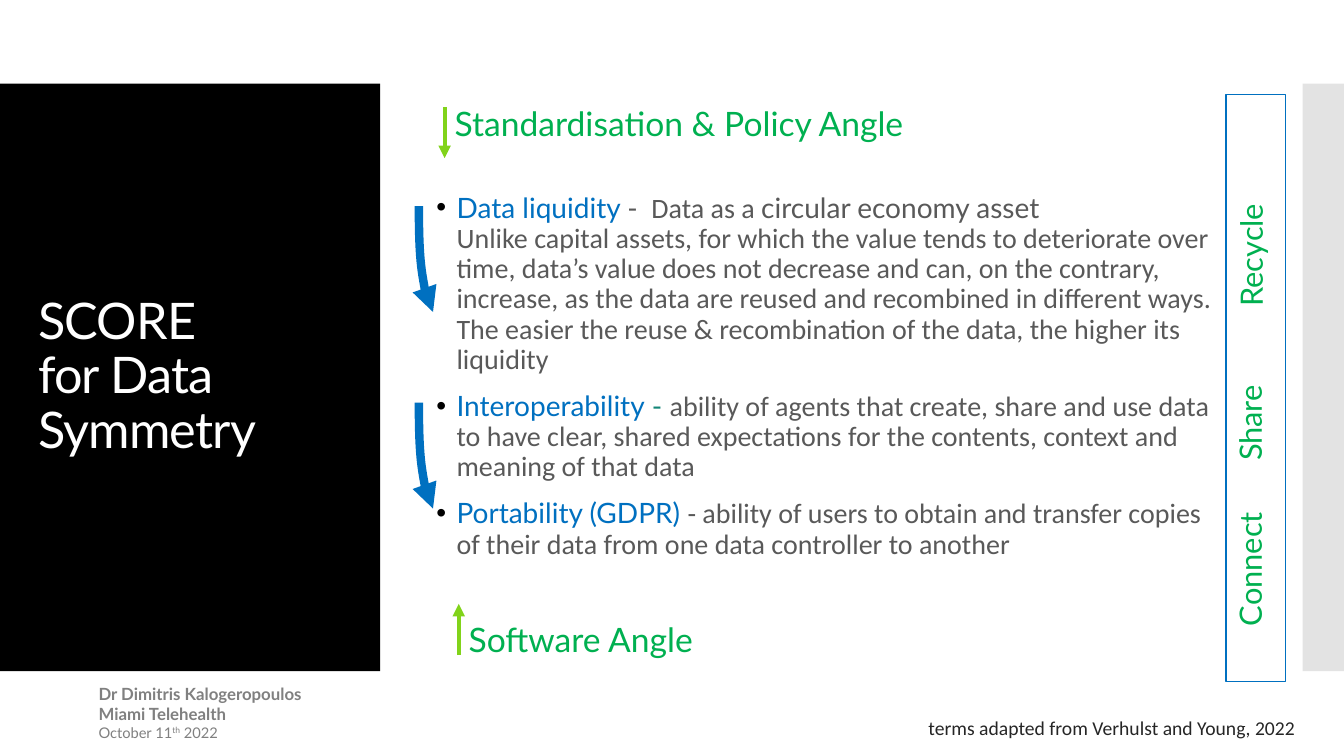
from lxml.etree import SubElement
from pptx import Presentation
from pptx.dml.color import RGBColor
from pptx.enum.shapes import MSO_CONNECTOR as CONN, MSO_SHAPE
from pptx.enum.text import MSO_ANCHOR as ANCHOR, MSO_AUTO_SIZE as AUTO
from pptx.oxml.ns import qn
from pptx.util import Pt

PX = 9144  # EMU per px, 100 px to the inch
BLUE, GREEN, LIME, GREY = "0070C0", "00B050", "81D31A", "595959"
BODY = {"size": Pt(20)}


def rgb(value):
    return RGBColor.from_string(value)


def add_text(box, paragraphs, anchor=ANCHOR.TOP, wrap=True, grow=True):
    """Add a text box; a paragraph is a list of (text, font, colour, format) runs or "\\n"."""
    tf = s.shapes.add_textbox(*(v * PX for v in box)).text_frame
    tf.word_wrap, tf.vertical_anchor = wrap, anchor
    tf.auto_size = AUTO.SHAPE_TO_FIT_TEXT if grow else AUTO.NONE
    for i, runs in enumerate(paragraphs):
        p = tf.add_paragraph() if i else tf.paragraphs[0]
        for run in runs:
            if run == "\n":
                p.add_line_break()
                continue
            text, font, colour, fmt = run
            r = p.add_run()
            r.text, r.font.name = text, font
            r.font.color.rgb = rgb(colour)
            for key, value in fmt.items():
                setattr(r.font, key, value)
    return tf


prs = Presentation()
prs.slide_width, prs.slide_height = 1333 * PX, 750 * PX
s = prs.slides.add_slide(prs.slide_layouts[6])

# Panels
for box, fill, line, alpha in [
    ((0, 83, 377, 583), "000000", None, None),
    ((1292, 83, 41, 583), "C8C8C8", None, 50),
    ((1216, 94, 59, 582), "FFFFFF", BLUE, None),
]:
    sp = s.shapes.add_shape(MSO_SHAPE.RECTANGLE, *(v * PX for v in box))
    sp.shadow.inherit = False
    sp.fill.solid()
    sp.fill.fore_color.rgb = rgb(fill)
    if alpha:
        clr = sp._element.spPr.find(qn("a:solidFill"))[0]
        SubElement(clr, qn("a:alpha"), val=str(alpha * 1000))
    if line:
        sp.line.color.rgb = rgb(line)
        sp.line.width = Pt(0.85)
    else:
        sp.line.fill.background()

# Title
title_format = {"size": Pt(36)}
tf = add_text((28, 123, 322, 503), [[
    ("SCORE", "Lato", "FFFFFF", title_format), "\n",
    ("for Data Symmetry", "Lato", "FFFFFF", title_format),
]], ANCHOR.MIDDLE, grow=False)
tf.paragraphs[0].line_spacing = 0.9
for r in tf.paragraphs[0].runs:
    r._r.get_or_add_rPr().set("spc", "-60")

# Definitions
tf = add_text((423, 94, 792, 560), [
    [
        ("Data liquidity ", "Lato", BLUE, BODY),
        ("- ", "Lato", GREY, BODY),
        (" Data as a ", "Calibri", GREY, BODY),
        ("circular economy asset", "Lato", GREY, BODY), "\n",
        ("Unlike capital assets, for which the value tends to deteriorate over time, "
         "data’s value does not decrease and can, on the contrary, increase, as the data "
         "are reused and recombined in different ways. The easier the reuse & "
         "recombination of the data, the higher its liquidity", "Calibri", GREY, BODY),
    ],
    [
        ("Interoperability", "Lato", BLUE, BODY),
        (" - ", "Lato", "138677", BODY),
        ("ability of agents that create, share and use data to have clear, shared "
         "expectations for the contents, context and meaning of that data",
         "Calibri", GREY, BODY),
    ],
    [
        ("Portability (GDPR) ", "Lato", BLUE, BODY),
        ("- ability of users to obtain and transfer copies of their data from one data "
         "controller to another", "Calibri", GREY, BODY),
    ],
], ANCHOR.MIDDLE, grow=False)
for p in tf.paragraphs:
    p.line_spacing, p.space_before = 0.9, Pt(12)
    pPr = p._p.get_or_add_pPr()
    pPr.set("marL", str(20 * PX))
    pPr.set("indent", str(-20 * PX))
    SubElement(SubElement(pPr, qn("a:buClr")), qn("a:srgbClr"), val="000000")
    SubElement(pPr, qn("a:buFont"), typeface="Arial")
    SubElement(pPr, qn("a:buChar"), char="•")

# Arrows: the curved ones lie flat and are turned upright
for kind, ends, colour, width in [
    (CONN.CURVE, (475, 250, 370, 264), BLUE, 6),
    (CONN.CURVE, (475, 445, 370, 459), BLUE, 6),
    (CONN.STRAIGHT, (455, 650, 455, 599), LIME, 3),
    (CONN.STRAIGHT, (441, 106, 441, 157), LIME, 3),
]:
    arrow = s.shapes.add_connector(kind, *(v * PX for v in ends))
    arrow.line.color.rgb = rgb(colour)
    arrow.line.width = Pt(width)
    spPr = arrow._element.spPr
    SubElement(spPr.find(qn("a:ln")), qn("a:tailEnd"), type="triangle")
    SubElement(spPr, qn("a:effectLst"))
    if kind == CONN.CURVE:
        spPr.find(qn("a:prstGeom")).set("prst", "curvedConnector2")
        spPr.find(qn("a:xfrm")).set("rot", str(270 * 60000))

# One-line labels
for text, box, font, size, colour, upright in [
    ("terms adapted from Verhulst and Young, 2022", (911, 705, 388, 34),
     "Calibri", 14, "262626", False),
    ("Connect", (1216, 498, 57, 133), "Lato", 22, GREEN, True),
    ("Share", (1216, 372, 57, 95), "Lato", 22, GREEN, True),
    ("Recycle", (1217, 190, 57, 124), "Lato", 22, GREEN, True),
    ("Software Angle", (455, 609, 254, 50), "Lato", 24, GREEN, False),
    ("Standardisation & Policy Angle", (441, 97, 489, 50), "Lato", 24, GREEN, False),
]:
    tf = add_text(box, [[(text, font, colour, {"size": Pt(size)})]], wrap=False)
    if upright:
        tf._txBody.bodyPr.set("vert", "vert270")

# Speaker and date
speaker = {"size": Pt(12), "bold": True}
date = {"size": Pt(10.5), "bold": False}
tf = add_text((88, 673, 384, 88), [
    [("Dr Dimitris Kalogeropoulos", "Lato", "808080", speaker)],
    [("Miami Telehealth", "Lato", "808080", speaker)],
    [(text, "Lato", "808080", date) for text in ("October 11", "th", " 2022")],
])
tf.paragraphs[2].runs[1]._r.get_or_add_rPr().set("baseline", "30000")

prs.save("out.pptx")
